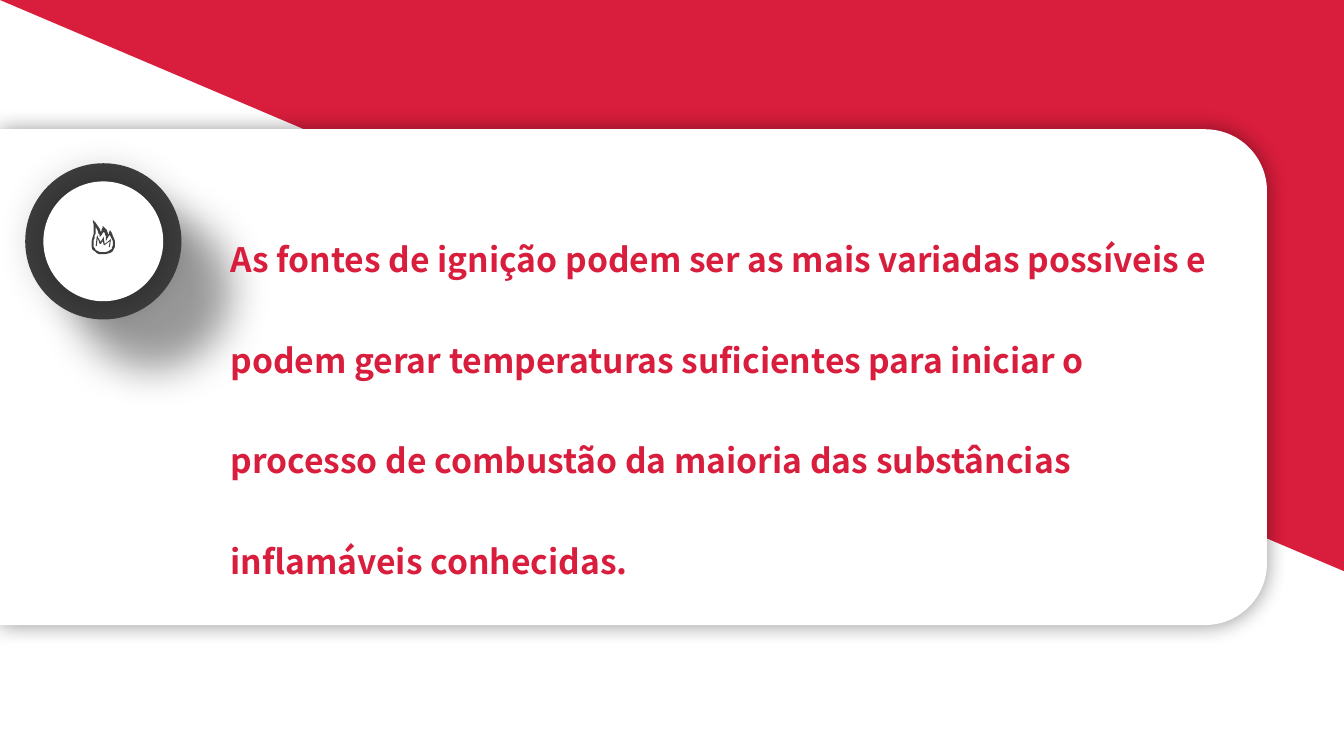
import pptx
import pptx.dml.color
import pptx.enum.shapes
import pptx.enum.text
import pptx.oxml
import pptx.oxml.ns
import pptx.util

Pt = pptx.util.Pt
SHAPE = pptx.enum.shapes.MSO_SHAPE
RED, WHITE, DARK = "D91D3C", "FFFFFF", "404040"
FONT = "Noto Sans CJK SC"
WIDTH, HEIGHT = 960, 540
FLAME_UNIT = 0.72

FLAME_INSIDE = [
    (21, 26), (20, 29), (19, 32), (10, 32), (5, 32), (2, 28), (2, 25),
    (2, 22), (2, 20), (3, 17), (4, 14), (4, 11), (4, 7),
    (7, 11), (8, 17), (8, 17), (8, 17), (12, 13), (12, 11),
    (13, 12), (14, 16), (14, 21), (14, 21), (16, 18), (18, 15),
    (21, 19), (22, 23), (21, 26),
]
FLAME_OUTSIDE = [
    (18, 10), (18, 13), (16, 15), (16, 15), (16, 10), (11, 6), (11, 6),
    (11, 6), (11, 9), (9, 12), (7, 5), (1, 0), (1, 0),
    (4, 12), (0, 16), (0, 25), (0, 30), (4, 34), (10, 34),
    (20, 34), (22, 31), (23, 27), (24, 22), (22, 15), (18, 10),
]
FLAME_SPIKES = [
    (19, 19), (18, 20), (13, 24), (12, 19), (12, 17), (10, 20), (9, 22),
    (6, 17), (6, 15), (5, 17), (4, 26), (5, 26), (6, 18), (8, 24),
    (9, 24), (11, 21), (12, 25), (13, 25), (18, 21), (17, 27), (18, 27),
    (19, 20),
]


def color(value):
    return pptx.dml.color.RGBColor.from_string(value)


def paint(shape, fill):
    shape.shadow.inherit = False
    shape.fill.solid()
    shape.fill.fore_color.rgb = color(fill)
    shape.line.fill.background()
    return shape


def add_figure(shapes, kind, box, fill, rotation=0):
    shape = shapes.add_shape(kind, *(Pt(length) for length in box))
    shape.rotation = rotation
    return paint(shape, fill)


def add_shadow(shape, blur, distance=0, angle=0):
    effects = shape.element.spPr.find(pptx.oxml.ns.qn("a:effectLst"))
    effects.append(pptx.oxml.parse_xml(
        f'<a:outerShdw {pptx.oxml.ns.nsdecls("a")} blurRad="{Pt(blur)}" '
        f'dist="{Pt(distance)}" dir="{angle * 60000}" algn="ctr" rotWithShape="0">'
        '<a:srgbClr val="000000"><a:alpha val="40000"/></a:srgbClr></a:outerShdw>'))


def add_text(page, text, box, size, fill, bold=False, spacing=1.0):
    frame = page.shapes.add_textbox(*(Pt(length) for length in box)).text_frame
    frame.word_wrap = True
    frame.auto_size = pptx.enum.text.MSO_AUTO_SIZE.SHAPE_TO_FIT_TEXT
    para = frame.paragraphs[0]
    para.line_spacing = spacing
    span = para.add_run()
    span.text = text
    span.font.name = FONT
    span.font.size = Pt(size)
    span.font.bold = bold
    span.font.color.rgb = color(fill)


def flatten(curve, steps=6):
    points = [curve[0]]
    for index in range(0, len(curve) - 1, 3):
        corners = curve[index:index + 4]
        for step in range(1, steps + 1):
            t = step / steps
            weights = ((1 - t) ** 3, 3 * t * (1 - t) ** 2, 3 * t * t * (1 - t), t ** 3)
            points.append(tuple(
                sum(weight * corner[axis] for weight, corner in zip(weights, corners))
                for axis in (0, 1)))
    return points


def add_outline(shapes, contours, left, top):
    builder = shapes.build_freeform(*contours[0][0], scale=Pt(1) * FLAME_UNIT)
    builder.add_line_segments(contours[0][1:], close=True)
    for contour in contours[1:]:
        builder.move_to(*contour[0])
        builder.add_line_segments(contour[1:], close=True)
    paint(builder.convert_to_shape(Pt(left), Pt(top)), DARK)


def draw_background(page, box):
    left, top, width, height = box
    add_figure(page.shapes, SHAPE.RECTANGLE, box, WHITE)
    add_figure(page.shapes, SHAPE.RIGHT_TRIANGLE, (left, top, width, 408), RED, 180)


def draw_card(page, box):
    left, top, width, height = box
    upright = (left + (width - height) / 2, top + (height - width) / 2, height, width)
    card = add_figure(page.shapes, SHAPE.ROUND_2_SAME_RECTANGLE, upright, WHITE, 90)
    card.adjustments[0] = 0.125
    card.adjustments[1] = 0
    add_shadow(card, 15)


def draw_badge(page, box):
    left, top, size, _ = box
    rim = 13
    rings = page.shapes.add_group_shape().shapes
    outer = add_figure(rings, SHAPE.OVAL, box, DARK)
    add_shadow(outer, 30, 50, 45)
    inner_box = (left + rim, top + rim, size - 2 * rim, size - 2 * rim)
    add_shadow(add_figure(rings, SHAPE.OVAL, inner_box, WHITE), 35)
    flame = page.shapes.add_group_shape().shapes
    flame_left, flame_top = left + 47.5, top + 40.4
    add_outline(flame, [flatten(FLAME_INSIDE), flatten(FLAME_OUTSIDE)], flame_left, flame_top)
    add_outline(flame, [FLAME_SPIKES], flame_left, flame_top)


def draw_message(page, box):
    add_text(
        page,
        "As fontes de ignição podem ser as mais variadas possíveis e podem gerar "
        "temperaturas suficientes para iniciar o processo de combustão da maioria "
        "das substâncias inflamáveis conhecidas.",
        box, size=24, fill=RED, bold=True, spacing=2.5)


def main():
    deck = pptx.Presentation()
    deck.slide_width, deck.slide_height = Pt(WIDTH), Pt(HEIGHT)
    page = deck.slides.add_slide(deck.slide_layouts[6])
    draw_background(page, (0, 0, WIDTH, HEIGHT))
    draw_card(page, (0, 92.3, 905, 354.2))
    draw_badge(page, (18, 116.6, 111.6, 111.6))
    draw_message(page, (157.5, 123.8, 713.5, 285.8))
    deck.save("out.pptx")


if __name__ == "__main__":
    main()
